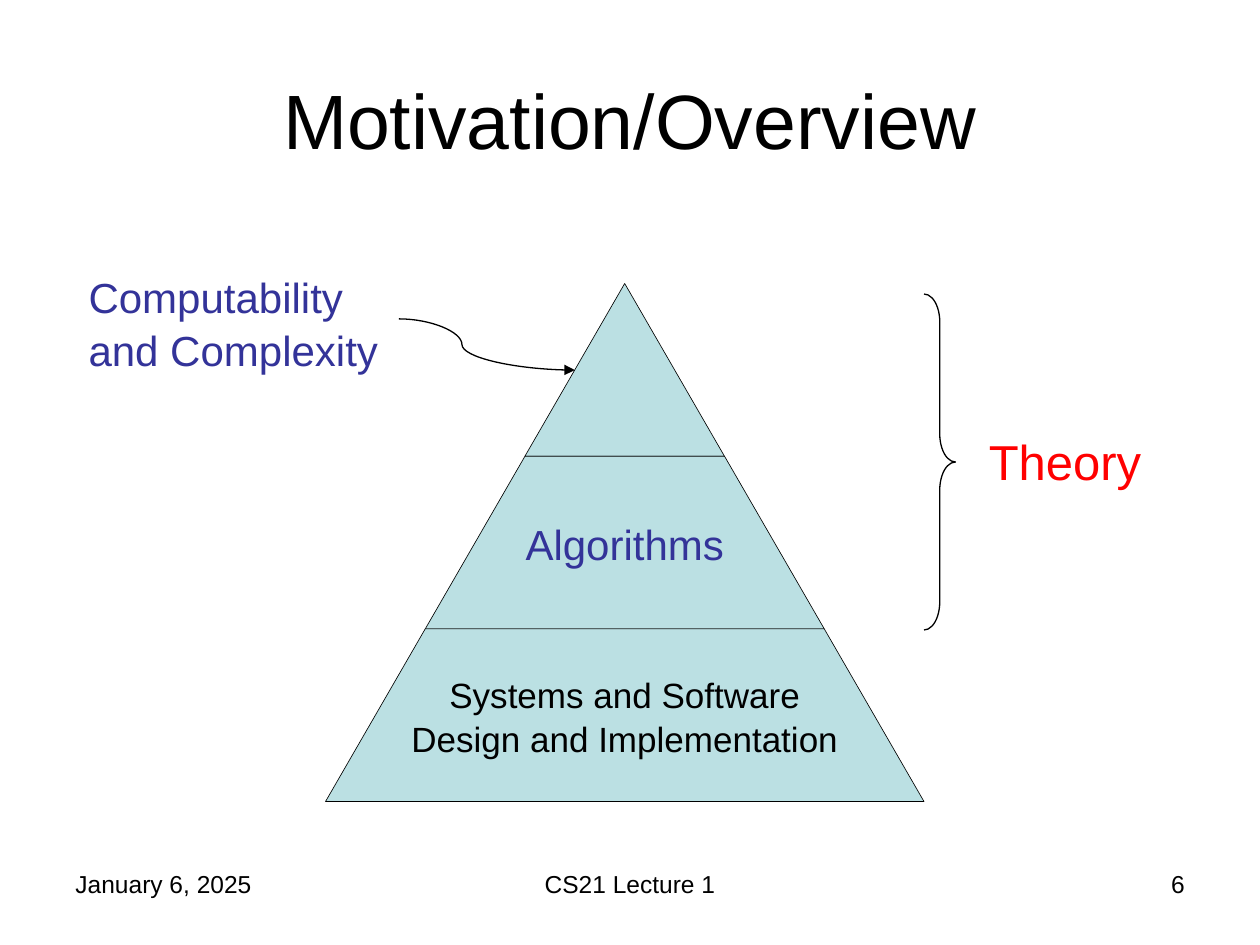
from lxml.etree import SubElement
from pptx import Presentation
from pptx.dml.color import RGBColor
from pptx.enum.shapes import MSO_CONNECTOR as Conn, MSO_SHAPE as Shape
from pptx.enum.text import MSO_ANCHOR as Anchor, PP_ALIGN as Align
from pptx.oxml.ns import qn
from pptx.util import Pt

BLACK = RGBColor(0, 0, 0)
BLUE = RGBColor(0x33, 0x33, 0x99)
RED = RGBColor(0xFF, 0, 0)
TEAL = RGBColor(0xBB, 0xE0, 0xE3)
FONT = "Arial"

TITLE = "Motivation/Overview"
# Pyramid tiers from the top: lines, size, colour
TIERS = [
    ([], 24, BLUE),
    (["Algorithms"], 24, BLUE),
    (["Systems and Software", "Design and Implementation"], 20, BLACK),
]
# Text, box (left, top, width, height), size, colour, alignment
LABELS = [
    ("January 6, 2025", (36, 492, 168, 37.5), 14, BLACK, Align.LEFT),
    ("CS21 Lecture 1", (246, 492, 228, 37.5), 14, BLACK, Align.CENTER),
    ("6", (516, 492, 168, 37.5), 14, BLACK, Align.RIGHT),
    ("Computability and Complexity", (43.5, 150, 184, 65), 24, BLUE, Align.LEFT),
    ("Theory", (558, 241.5, 132, 41), 28, RED, Align.LEFT),
]
APEX_X, APEX_Y = 357, 162
TIER_H, TIER_DX = 98.67, 57  # height of a tier, growth of its half width
ARROW = (228, 182.25, 328.5, 211.5)
BRACE = (528, 168, 18, 192)


def write(frame, lines, size, color, align):
    for i, line in enumerate(lines):
        para = frame.paragraphs[0] if i == 0 else frame.add_paragraph()
        para.alignment = align
        para.line_spacing = 1.05
        run = para.add_run()
        run.text = line
        run.font.name = FONT
        run.font.size = Pt(size)
        run.font.color.rgb = color


def outline(shape, width):
    shape.line.color.rgb = BLACK
    shape.line.width = Pt(width)


def add_tier(shapes, i, lines, size, color):
    top, low = APEX_Y + i * TIER_H, APEX_Y + (i + 1) * TIER_H
    near, far = i * TIER_DX, (i + 1) * TIER_DX
    points = [(APEX_X - near, top), (APEX_X + near, top),
              (APEX_X + far, low), (APEX_X - far, low)]
    if near == 0:
        points.pop(0)
    first, *rest = [(Pt(x), Pt(y)) for x, y in points]
    pen = shapes.build_freeform(*first)
    pen.add_line_segments(rest, close=True)
    tier = pen.convert_to_shape()
    tier.shadow.inherit = False
    tier.fill.solid()
    tier.fill.fore_color.rgb = TEAL
    outline(tier, 0.37)
    frame = tier.text_frame
    frame.word_wrap = False
    frame.vertical_anchor = Anchor.MIDDLE
    write(frame, lines, size, color, Align.CENTER)


def add_arrow(shapes):
    arrow = shapes.add_connector(Conn.CURVE, *map(Pt, ARROW))
    outline(arrow, 0.75)
    props = arrow._element.spPr
    guides = props.find(qn("a:prstGeom")).get_or_add_avLst()
    SubElement(guides, qn("a:gd"), name="adj1", fmla="val 35800")
    SubElement(props.find(qn("a:ln")), qn("a:tailEnd"), type="triangle")
    SubElement(props, qn("a:effectLst"))


def add_brace(shapes):
    brace = shapes.add_shape(Shape.RIGHT_BRACE, *map(Pt, BRACE))
    brace.adjustments[0] = 0.889
    brace.adjustments[1] = 0.5
    brace.shadow.inherit = False
    brace.fill.background()
    outline(brace, 0.75)


def main():
    deck = Presentation()
    deck.slide_width, deck.slide_height = Pt(720), Pt(540)
    slide = deck.slides.add_slide(deck.slide_layouts[5])
    shapes = slide.shapes

    title = shapes.title
    title.left, title.top, title.width, title.height = map(Pt, (36, 21.5, 648, 90))
    title.text_frame.vertical_anchor = Anchor.MIDDLE
    write(title.text_frame, [TITLE], 44, BLACK, Align.CENTER)

    pyramid = shapes.add_group_shape()
    for i, tier in enumerate(TIERS):
        add_tier(pyramid.shapes, i, *tier)

    for text, box, size, color, align in LABELS:
        frame = shapes.add_textbox(*map(Pt, box)).text_frame
        frame.word_wrap = True
        write(frame, [text], size, color, align)

    add_arrow(shapes)
    add_brace(shapes)
    deck.save("out.pptx")


if __name__ == "__main__":
    main()
